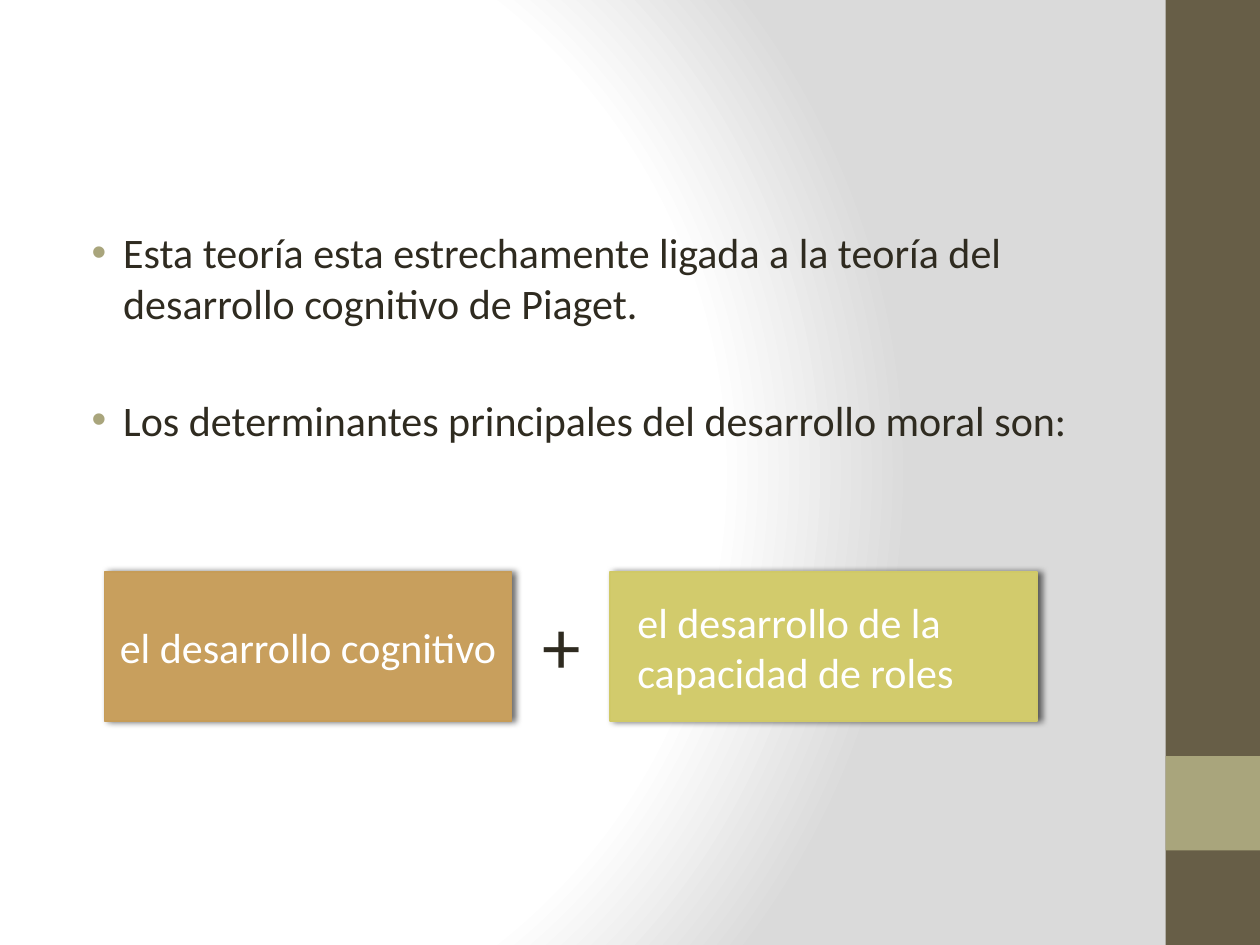
from dataclasses import dataclass

from lxml.etree import SubElement
from pptx import Presentation
from pptx.dml.color import RGBColor
from pptx.enum.shapes import MSO_SHAPE as Shape
from pptx.enum.text import MSO_ANCHOR as Anchor, MSO_AUTO_SIZE as AutoSize, PP_ALIGN as Align
from pptx.oxml import parse_xml
from pptx.oxml.ns import nsdecls, qn
from pptx.util import Inches, Pt


@dataclass(frozen=True)
class Theme:
    """Colours, font and type sizes of the slide."""
    font: str = "Calibri"
    ink: str = "2F2B20"
    light: str = "FFFFFF"
    shade: str = "DADADA"
    olive: str = "675E47"
    sage: str = "A9A57C"
    ochre: str = "C89F5D"
    ochre_edge: str = "C69C58"
    lime: str = "D2CB6C"
    lime_edge: str = "D0C967"
    shadow: str = "000000"
    body: int = 24
    sign: int = 44


class Deck:
    """Draws on the current slide in cells of a 100 by 75 grid."""

    def __init__(self, theme):
        """Open a blank slide."""
        self.theme = theme
        self.file = Presentation()
        self.file.slide_width, self.file.slide_height = Inches(10), Inches(7.5)
        self.cell = self.file.slide_width / 100
        self.slide = self.file.slides.add_slide(self.file.slide_layouts[6])

    def place(self, *cells):
        """Turn grid cells into lengths."""
        return [round(n * self.cell) for n in cells]

    def backdrop(self):
        """Fill the background with a radial gradient."""
        stops = ((0, self.theme.light), (75, self.theme.light), (100, self.theme.shade))
        listed = "".join(f'<a:gs pos="{at * 1000}"><a:srgbClr val="{colour}"/></a:gs>'
                         for at, colour in stops)
        self.slide.background.fill.solid()
        properties = self.slide.element.cSld.bg.bgPr
        properties.replace(properties[0], parse_xml(
            f'<a:gradFill {nsdecls("a")} rotWithShape="1"><a:gsLst>{listed}</a:gsLst>'
            '<a:path path="circle"><a:fillToRect l="20000" t="50000" r="100000" b="50000"/>'
            '</a:path></a:gradFill>'))

    def add_words(self, paragraph, words, size, colour):
        """Add one styled run."""
        run = paragraph.add_run()
        run.text = words
        run.font.name, run.font.size = self.theme.font, Pt(size)
        run.font.color.rgb = RGBColor.from_string(colour)

    def panel(self, cells, colour, edge=None):
        """Add a flat rectangle, outlined on request."""
        panel = self.slide.shapes.add_shape(Shape.RECTANGLE, *self.place(*cells))
        panel.shadow.inherit = False
        panel.fill.solid()
        panel.fill.fore_color.rgb = RGBColor.from_string(colour)
        if edge:
            panel.line.width = Pt(1)
            panel.line.color.rgb = RGBColor.from_string(edge)
        else:
            panel.line.fill.background()
        return panel

    def card(self, cells, colour, edge, words, align, indent=0):
        """Add a shadowed rectangle with its words."""
        card = self.panel(cells, colour, edge)
        effects = card.element.spPr.find(qn("a:effectLst"))
        shadow = SubElement(effects, qn("a:outerShdw"), blurRad=str(Pt(4)),
                            dist=str(Pt(2)), dir="0", rotWithShape="0")
        tint = SubElement(shadow, qn("a:srgbClr"), val=self.theme.shadow)
        SubElement(tint, qn("a:alpha"), val="60000")
        frame = card.text_frame
        frame.word_wrap, frame.vertical_anchor = True, Anchor.MIDDLE
        line = frame.paragraphs[0]
        line.alignment = align
        line._p.get_or_add_pPr().set("marL", str(Inches(indent)))
        self.add_words(line, words, self.theme.body, self.theme.light)

    def bullets(self, cells, points, gap):
        """Add a bulleted list with a gap between the points."""
        frame = self.slide.shapes.add_textbox(*self.place(*cells)).text_frame
        frame.word_wrap = True
        for number, words in enumerate(points):
            point = frame.add_paragraph() if number else frame.paragraphs[0]
            point.space_before = Pt(gap if number else 0)
            style = point._p.get_or_add_pPr()
            style.set("marL", str(Inches(0.38)))
            style.set("indent", str(Inches(-0.25)))
            SubElement(SubElement(style, qn("a:buClr")), qn("a:srgbClr"), val=self.theme.sage)
            SubElement(style, qn("a:buFont"), typeface="Arial")
            SubElement(style, qn("a:buChar"), char="•")
            self.add_words(point, words, self.theme.body, self.theme.ink)

    def sign(self, cells, symbol):
        """Add a large symbol."""
        frame = self.slide.shapes.add_textbox(*self.place(*cells)).text_frame
        frame.word_wrap, frame.auto_size = True, AutoSize.SHAPE_TO_FIT_TEXT
        self.add_words(frame.paragraphs[0], symbol, self.theme.sign, self.theme.ink)


def main():
    """Build and save the slide."""
    theme = Theme()
    deck = Deck(theme)
    deck.backdrop()
    deck.panel((92.5, 0, 7.5, 75), theme.olive)
    deck.panel((92.5, 60, 7.5, 7.5), theme.sage)
    deck.bullets((5, 17.5, 83.3, 52.5), (
        "Esta teoría esta estrechamente ligada a la teoría del desarrollo cognitivo de Piaget.",
        "Los determinantes principales del desarrollo moral son:"), gap=38)
    card_top, card_height = 45.4, 11.8
    deck.card((8.3, card_top, 32.3, card_height), theme.ochre, theme.ochre_edge,
              "el desarrollo cognitivo", Align.CENTER)
    deck.card((48.4, card_top, 33.9, card_height), theme.lime, theme.lime_edge,
              "el desarrollo de la capacidad de roles", Align.LEFT, indent=0.12)
    deck.sign((42.1, 46.9, 5.5, 8.4), "+")
    deck.file.save("out.pptx")


if __name__ == "__main__":
    main()
